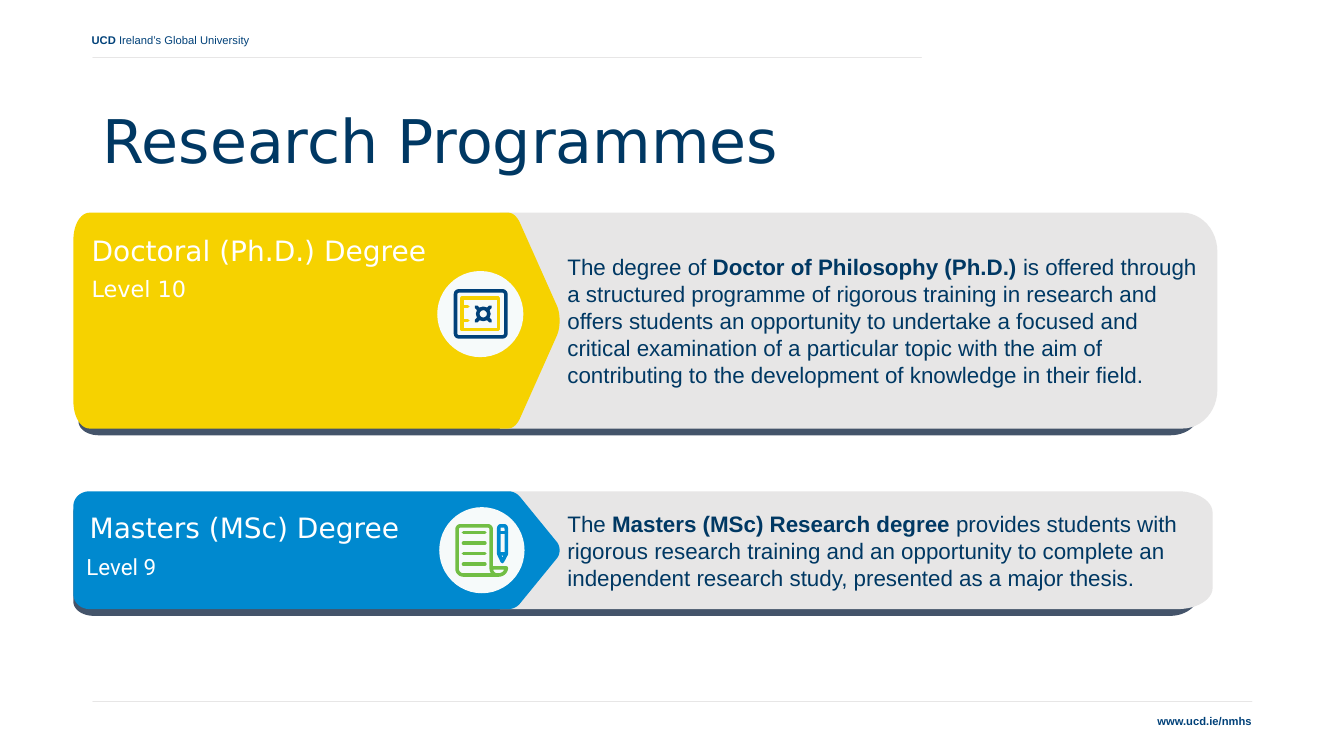
"""Builds the Research Programmes slide."""
from lxml.etree import SubElement
from pptx import Presentation
from pptx.dml.color import RGBColor
from pptx.enum.shapes import MSO_CONNECTOR, MSO_SHAPE
from pptx.enum.text import MSO_ANCHOR, PP_ALIGN
from pptx.oxml.ns import qn
from pptx.util import Cm, Pt

COLOURS = {
    "navy": "004179", "ink": "003863", "slate": "44546A", "grey": "E7E6E6",
    "yellow": "F6D200", "blue": "0089CF", "green": "71BE44",
    "pale": "F6FAFA", "white": "FFFFFF",
}
STROKE = 0.09
RIBBON = [
    (2.26, 0), (2.03, 0, 1.85, 0.056, 1.85, 0.125),
    (1.85, 0.875), (1.85, 0.944, 2.03, 1, 2.26, 1),
    (12.8, 1), (12.93, 1, 13.04, 0.98, 13.11, 0.95),
    (14.02, 0.575), (14.13, 0.535, 14.13, 0.465, 14.02, 0.425),
    (13.11, 0.05), (13.04, 0.02, 12.93, 0, 12.8, 0),
]
SCROLL = [
    (12.38, 14.31), (12.38, 13.34), (12.38, 13.29, 12.34, 13.25, 12.29, 13.25),
    (11.61, 13.25), (11.56, 13.25, 11.52, 13.29, 11.52, 13.34),
    (11.52, 14.33), (11.52, 14.42, 11.59, 14.49, 11.68, 14.49),
    (12.57, 14.49), (12.67, 14.49, 12.76, 14.41, 12.76, 14.31),
    (12.38, 14.31), (12.38, 14.4, 12.43, 14.47, 12.5, 14.49),
]
PENCIL = [
    (12.57, 13.96), (12.57, 13.33), (12.57, 13.28, 12.59, 13.25, 12.63, 13.25),
    (12.7, 13.25), (12.74, 13.25, 12.76, 13.28, 12.76, 13.33),
    (12.76, 13.96), (12.66, 14.15), (12.57, 13.96), (12.76, 13.96),
]


def flatten(segments, steps=12):
    """Turns lines and cubic curves into points."""
    points = []
    for segment in segments:
        if len(segment) == 2:
            points.append(segment)
            continue
        nodes = [points[-1], segment[:2], segment[2:4], segment[4:]]
        for step in range(1, steps + 1):
            t = step / steps
            weights = ((1 - t) ** 3, 3 * t * (1 - t) ** 2, 3 * t * t * (1 - t), t ** 3)
            points.append(tuple(
                sum(weight * node[axis] for weight, node in zip(weights, nodes))
                for axis in (0, 1)))
    return points


def rounded_bar(left, right, left_x, left_y, right_x, right_y):
    """Gives a bar of unit height with elliptical corners."""
    bend = 0.45
    return [
        (left + left_x, 0),
        (left + bend * left_x, 0, left, bend * left_y, left, left_y),
        (left, 1 - left_y),
        (left, 1 - bend * left_y, left + bend * left_x, 1, left + left_x, 1),
        (right - right_x, 1),
        (right - bend * right_x, 1, right, 1 - bend * right_y, right, 1 - right_y),
        (right, right_y),
        (right, bend * right_y, right - bend * right_x, 0, right - right_x, 0),
    ]


class Slide:
    """Holds the style and the page, and draws each kind of element."""

    def __init__(self, page):
        """Keeps the page."""
        self.page = page

    def colour(self, name):
        """Looks up a colour."""
        return RGBColor.from_string(COLOURS[name])

    def paint(self, shape, fill=None, line=None, width=STROKE):
        """Sets the fill and the line of a shape."""
        shape.shadow.inherit = False
        if fill:
            shape.fill.solid()
            shape.fill.fore_color.rgb = self.colour(fill)
        else:
            shape.fill.background()
        if line:
            self.stroke(shape, line, width)
        else:
            shape.line.fill.background()
        return shape

    def stroke(self, shape, colour, width):
        """Sets a line with round ends and joins."""
        shape.line.color.rgb = self.colour(colour)
        shape.line.width = Cm(width)
        outline = shape._element.spPr.find(qn("a:ln"))
        outline.set("cap", "rnd")
        SubElement(outline, qn("a:round"))

    def outline(self, segments, top=0, height=1, fill=None, line=None):
        """Draws a closed filled outline or an open stroke."""
        points = [(Cm(x), Cm(top + y * height)) for x, y in flatten(segments)]
        builder = self.page.shapes.build_freeform(*points[0], scale=1.0)
        builder.add_line_segments(points[1:], close=fill is not None)
        return self.paint(builder.convert_to_shape(), fill, line)

    def preset(self, kind, left, top, width, height, fill=None, line=None):
        """Draws a preset shape."""
        shape = self.page.shapes.add_shape(kind, Cm(left), Cm(top), Cm(width), Cm(height))
        return self.paint(shape, fill, line)

    def rule(self, x1, y1, x2, y2, colour, width=STROKE):
        """Draws a straight line."""
        line = self.page.shapes.add_connector(
            MSO_CONNECTOR.STRAIGHT, Cm(x1), Cm(y1), Cm(x2), Cm(y2))
        self.stroke(line, colour, width)
        SubElement(line._element.spPr, qn("a:effectLst"))

    def put_text(self, shape, spans, size, colour, font="Arial",
                 insets=(0.25, 0.13, 0.25, 0.13), align=PP_ALIGN.LEFT, spacing=None):
        """Fills a shape with one paragraph of plain and bold spans."""
        frame = shape.text_frame
        frame.word_wrap = True
        frame.vertical_anchor = MSO_ANCHOR.MIDDLE
        frame.margin_left, frame.margin_top, frame.margin_right, frame.margin_bottom = map(
            Cm, insets)
        paragraph = frame.paragraphs[0]
        paragraph.alignment = align
        if spacing:
            paragraph.line_spacing = spacing
        paragraph.font.name = font
        paragraph.font.size = Pt(size)
        paragraph.font.color.rgb = self.colour(colour)
        for text, bold in spans:
            span = paragraph.add_run()
            span.text = text
            if bold:
                span.font.bold = True

    def text(self, left, top, width, height, spans, size, colour, **style):
        """Adds a text box."""
        box = self.page.shapes.add_textbox(Cm(left), Cm(top), Cm(width), Cm(height))
        self.put_text(box, spans, size, colour, **style)

    def card(self, top, height, right, fill, spans, shadow):
        """Draws a shadow, a text panel and a ribbon."""
        shadow_left, shadow_top, shadow_height = shadow
        self.outline(rounded_bar(shadow_left, 30.2, 0.51, 0.12, 0.71, 0.18),
                     shadow_top, shadow_height, fill="slate")
        panel = self.outline(rounded_bar(12.6, right, 0, 0, 0.88, 0.18),
                             top, height, fill="grey")
        self.put_text(panel, spans, 16, "ink", insets=(1.7, 0.33, 0.33, 0.33))
        self.outline(RIBBON, top, height, fill=fill)

    def label(self, left, top, width, text, size, font="DejaVu Sans"):
        """Adds white text on a ribbon."""
        self.text(left, top, width, 1.02, [(text, False)], size, "white",
                  font=font, insets=(0.33,) * 4)

    def scroll_icon(self):
        """Draws a written scroll and a pencil."""
        self.preset(MSO_SHAPE.OVAL, 11.07, 12.78, 2.15, 2.17, fill="pale")
        self.outline(SCROLL, line="green")
        for row in range(4):
            y = 13.42 + 0.265 * row
            self.rule(11.68, y, 12.22, y, "green")
        self.outline(PENCIL, line="blue")
        self.rule(12.57, 13.42, 12.76, 13.42, "blue")

    def safe_icon(self):
        """Draws a safe with a dial."""
        self.preset(MSO_SHAPE.OVAL, 11.02, 6.83, 2.17, 2.17, fill="pale")
        frame = self.preset(MSO_SHAPE.ROUNDED_RECTANGLE, 11.48, 7.33, 1.27, 1.16, line="navy")
        frame.adjustments[0] = 0.07
        self.preset(MSO_SHAPE.RECTANGLE, 11.65, 7.51, 0.91, 0.8, line="yellow")
        for y in (7.72, 8.08):
            self.rule(11.7, y, 11.79, y, "yellow")
        x, y = 12.18, 7.91
        self.preset(MSO_SHAPE.OVAL, x - 0.14, y - 0.14, 0.28, 0.28, line="navy")
        for across in (-1, 1):
            for down in (-1, 1):
                self.rule(x + 0.11 * across, y + 0.11 * down,
                          x + 0.18 * across, y + 0.18 * down, "navy")


def main():
    """Builds and saves the deck."""
    deck = Presentation()
    deck.slide_width, deck.slide_height = Cm(33.87), Cm(19.05)
    slide = Slide(deck.slides.add_slide(deck.slide_layouts[6]))

    slide.text(2.06, 0.51, 11.43, 1.02,
               [("UCD", True), (" Ireland’s Global University", False)], 8, "navy")
    slide.rule(2.34, 17.68, 31.55, 17.68, "grey", 0.02)
    slide.rule(2.34, 1.45, 23.22, 1.45, "grey", 0.02)
    slide.text(20.37, 17.65, 11.43, 1.02, [("www.ucd.ie/nmhs", True)], 8, "navy",
               align=PP_ALIGN.RIGHT)

    slide.card(12.38, 2.97, 30.56, "blue", [
        ("The ", False), ("Masters (MSc) Research degree", True),
        (" provides students with rigorous research training and an opportunity to complete "
         "an independent research study, presented as a major thesis.", False),
    ], (1.85, 12.55, 2.97))
    slide.label(1.85, 13.77, 7.44, "Level 9", 16, "Roboto")
    slide.label(1.93, 12.78, 9.32, "Masters (MSc) Degree", 20)
    slide.scroll_icon()

    slide.card(5.36, 5.44, 30.68, "yellow", [
        ("The degree of ", False), ("Doctor of Philosophy (Ph.D.) ", True),
        ("is offered through a structured programme of rigorous training in research and "
         "offers students an opportunity to undertake a focused and critical examination of "
         "a particular topic with the aim of contributing to the development of knowledge "
         "in their field.", False),
    ], (1.98, 8.1, 2.87))
    slide.label(1.98, 6.76, 8.99, "Level 10", 16)
    slide.label(1.98, 5.79, 10.77, "Doctoral (Ph.D.) Degree", 20)
    slide.safe_icon()

    slide.text(2.34, 1.78, 29.21, 3.68, [("Research Programmes", False)], 43, "ink",
               font="DejaVu Sans", spacing=0.9)
    deck.save("out.pptx")


if __name__ == "__main__":
    main()
